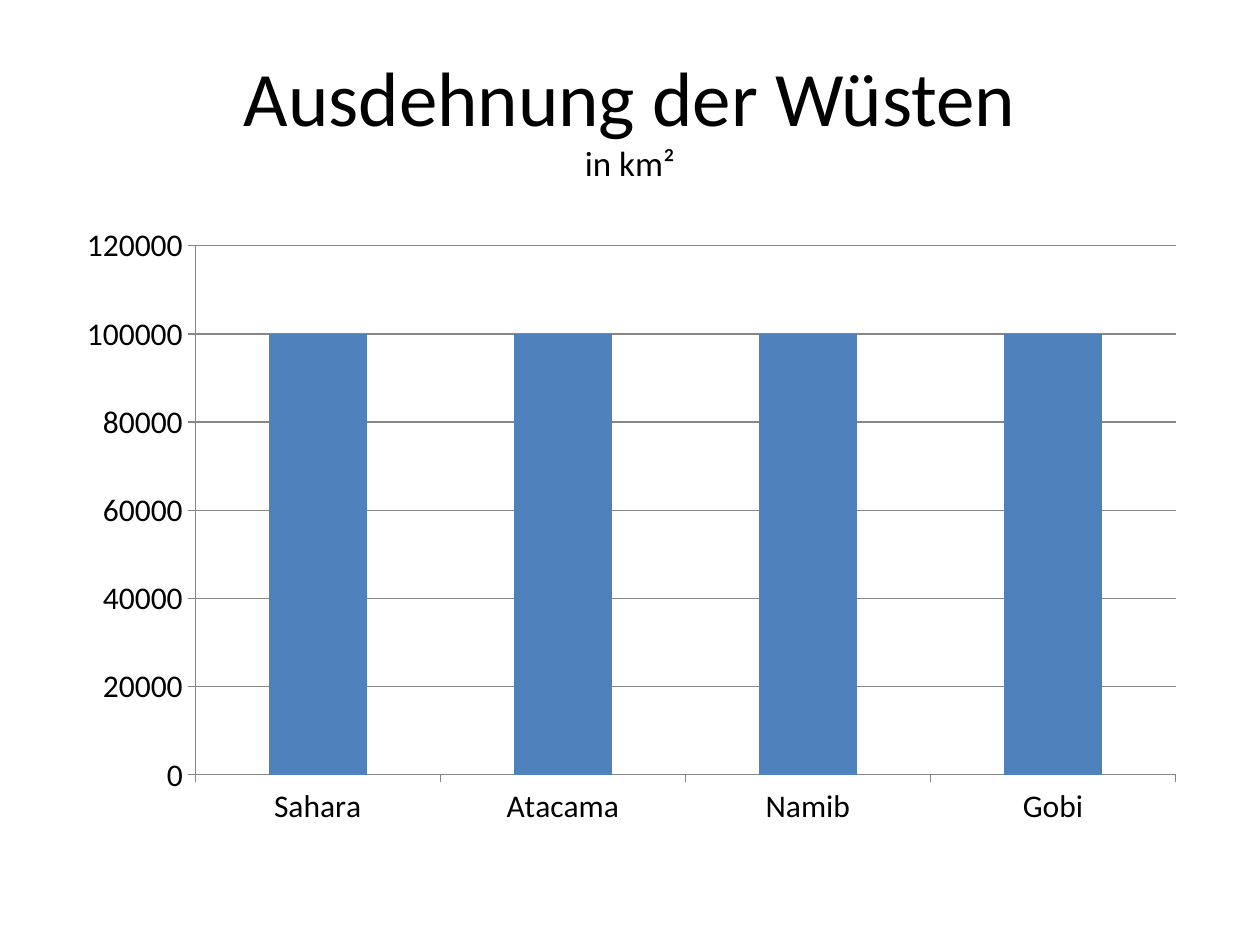
from pptx import Presentation
from pptx.chart.data import CategoryChartData
from pptx.dml.color import RGBColor
from pptx.enum.chart import XL_CHART_TYPE, XL_TICK_MARK
from pptx.enum.text import MSO_ANCHOR, PP_ALIGN
from pptx.util import Inches, Pt

BLACK = RGBColor(0x00, 0x00, 0x00)
BLUE = RGBColor(0x4F, 0x81, 0xBD)
GRAY = RGBColor(0x86, 0x86, 0x86)
FACE = "Calibri"


def set_font(font, size):
    font.name = FACE
    font.size = Pt(size)
    font.bold = False
    font.color.rgb = BLACK


def add_title(slide, head, unit):
    box = slide.shapes.add_textbox(Inches(0.5), Inches(0.3), Inches(9), Inches(1.25))
    frame = box.text_frame
    frame.word_wrap = True
    frame.vertical_anchor = MSO_ANCHOR.MIDDLE
    # A vertical tab makes a line break within the paragraph
    para = frame.paragraphs[0]
    para.text = f"{head}\v{unit}"
    para.alignment = PP_ALIGN.CENTER
    for run, size in zip(para.runs, (44, 20)):
        set_font(run.font, size)


def style_line(line):
    line.color.rgb = GRAY
    line.width = Pt(0.75)


def add_bars(slide, areas):
    data = CategoryChartData()
    data.categories = list(areas)
    data.add_series("Series 1", list(areas.values()))
    chart = slide.shapes.add_chart(
        XL_CHART_TYPE.COLUMN_CLUSTERED,
        Inches(0.51), Inches(1.7), Inches(9), Inches(4.95), data,
    ).chart
    chart.has_legend = False
    chart.has_title = False
    set_font(chart.font, 18)

    # Bars
    plot = chart.plots[0]
    plot.gap_width = 150
    plot.vary_by_categories = False
    fill = plot.series[0].format.fill
    fill.solid()
    fill.fore_color.rgb = BLUE

    # Axes and grid
    for axis in (chart.category_axis, chart.value_axis):
        axis.major_tick_mark = XL_TICK_MARK.OUTSIDE
        axis.minor_tick_mark = XL_TICK_MARK.NONE
        style_line(axis.format.line)
    scale = chart.value_axis
    scale.minimum_scale = 0
    scale.maximum_scale = 120000
    scale.major_unit = 20000
    scale.has_major_gridlines = True
    style_line(scale.major_gridlines.format.line)


def main():
    deck = Presentation()
    deck.slide_width = Inches(10)
    deck.slide_height = Inches(7.5)
    slide = deck.slides.add_slide(deck.slide_layouts[6])
    add_title(slide, "Ausdehnung der Wüsten", "in km²")
    add_bars(slide, dict.fromkeys(("Sahara", "Atacama", "Namib", "Gobi"), 100000))
    deck.save("out.pptx")


if __name__ == "__main__":
    main()
